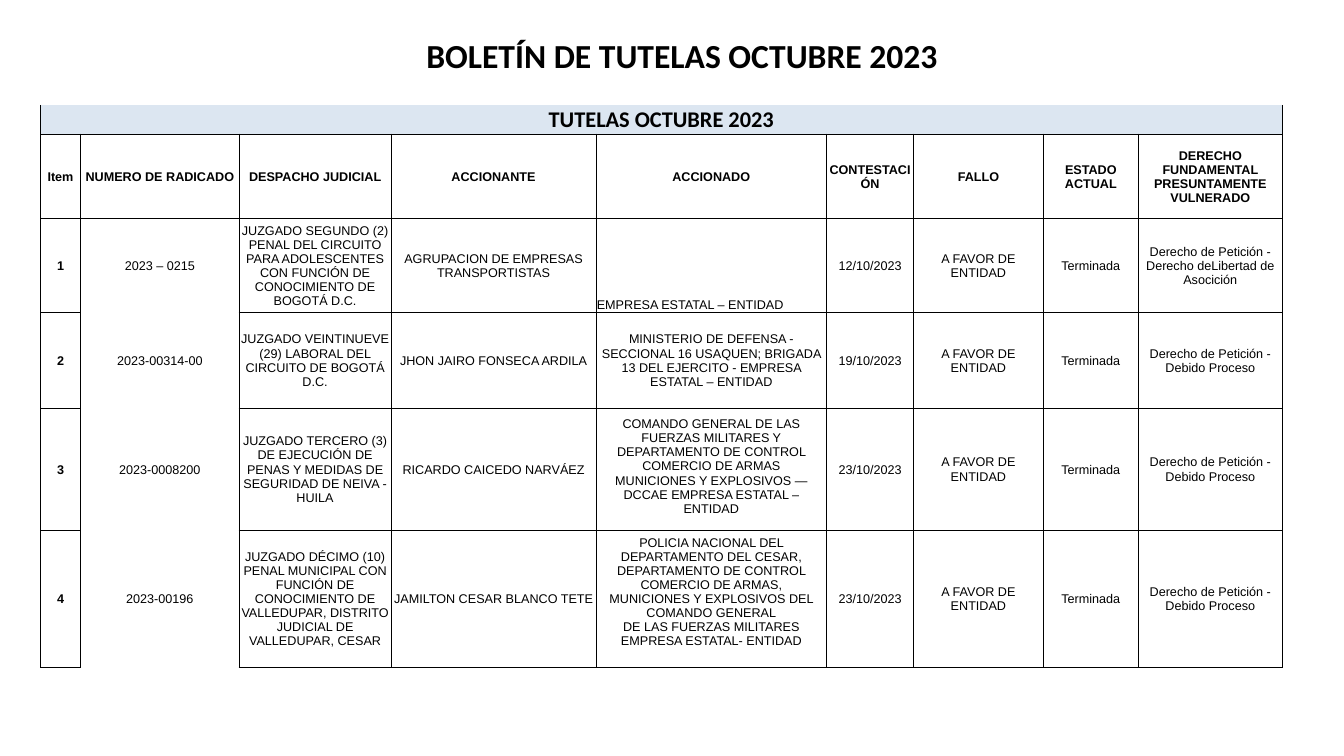
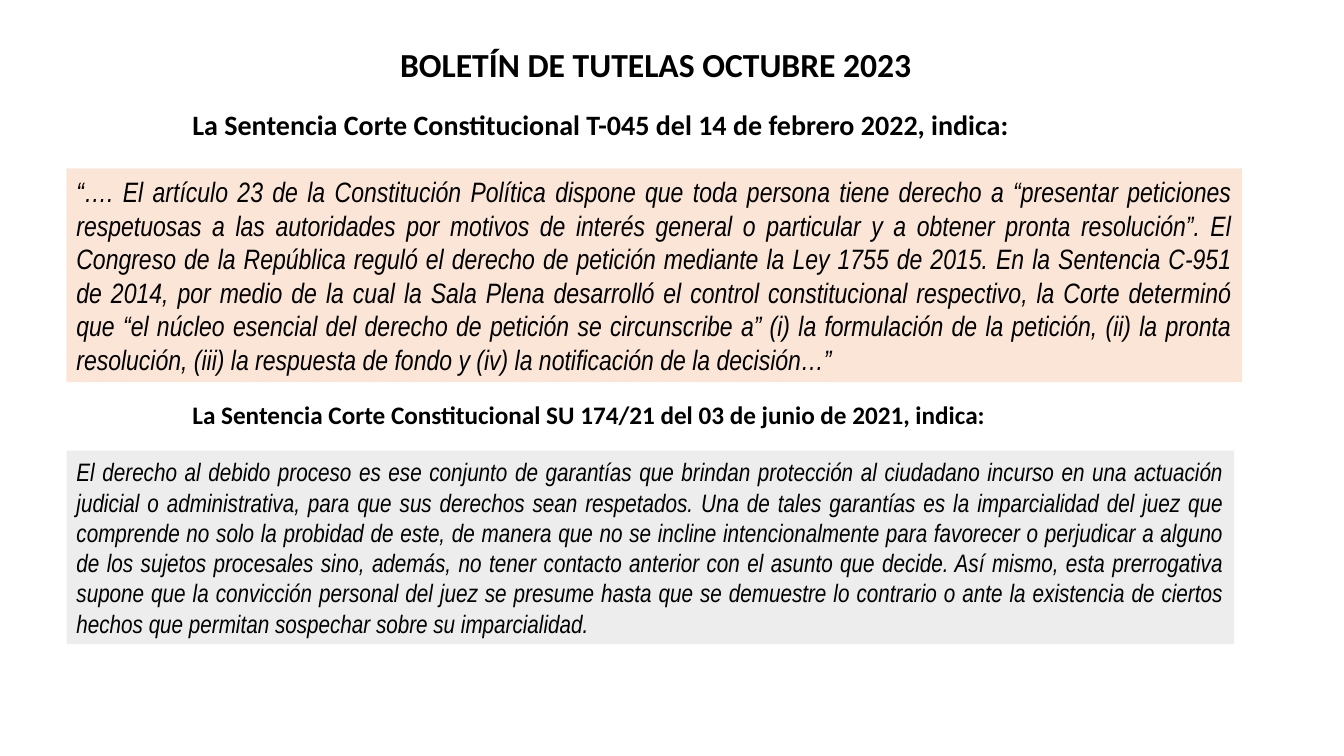
from dataclasses import dataclass

from lxml.etree import SubElement
from pptx import Presentation
from pptx.dml.color import RGBColor
from pptx.enum.shapes import MSO_SHAPE
from pptx.enum.text import MSO_ANCHOR, MSO_AUTO_SIZE, PP_ALIGN
from pptx.oxml.ns import qn
from pptx.util import Inches, Pt


@dataclass(frozen=True)
class Theme:
    ink: str = "000000"
    band: str = "DCE6F1"
    peach: str = "FBE5D6"
    gray: str = "EDEDED"
    heading_font: str = "Calibri"
    table_font: str = "Arial"
    quote_font: str = "Arial Narrow"
    title_size: int = 24
    large_size: int = 20
    medium_size: int = 18
    band_size: int = 16
    cell_size: int = 9
    border_width: float = 0.5


THEME = Theme()
TITLE = "BOLETÍN DE TUTELAS OCTUBRE 2023"
TABLE_TITLE = "TUTELAS OCTUBRE 2023"
COLUMN_WIDTHS = [0.4, 1.57, 1.51, 2.03, 2.29, 0.86, 1.29, 0.94, 1.43]
ROW_HEIGHTS = [0.29, 0.84, 0.93, 0.95, 1.21, 1.36]
ITEM_COLUMN, FILE_COLUMN, DEFENDANT_COLUMN = 0, 1, 4
CELL_MARGINS = {
    "margin_left": Inches(0.01),
    "margin_right": Inches(0.01),
    "margin_top": Inches(0.01),
    "margin_bottom": 0,
    "vertical_anchor": MSO_ANCHOR.MIDDLE,
}
RULING = "A FAVOR DE ENTIDAD"
STATUS = "Terminada"
DUE_PROCESS = "Derecho de Petición - Debido Proceso"
HEADERS = [
    "Item",
    "NUMERO DE RADICADO",
    "DESPACHO JUDICIAL",
    "ACCIONANTE",
    "ACCIONADO",
    "CONTESTACIÓN",
    "FALLO",
    "ESTADO ACTUAL",
    "DERECHO FUNDAMENTAL PRESUNTAMENTE VULNERADO",
]
CASES = [
    (
        "2023 – 0215",
        "JUZGADO SEGUNDO (2) PENAL DEL CIRCUITO PARA ADOLESCENTES CON FUNCIÓN DE "
        "CONOCIMIENTO DE BOGOTÁ D.C.",
        "AGRUPACION DE EMPRESAS TRANSPORTISTAS",
        "EMPRESA ESTATAL – ENTIDAD",
        "12/10/2023",
        "Derecho de Petición - Derecho deLibertad de Asocición",
    ),
    (
        "2023-00314-00",
        "JUZGADO VEINTINUEVE (29) LABORAL DEL CIRCUITO DE BOGOTÁ D.C.",
        "JHON JAIRO FONSECA ARDILA",
        "MINISTERIO DE DEFENSA - SECCIONAL 16 USAQUEN; BRIGADA 13 DEL EJERCITO - "
        "EMPRESA ESTATAL – ENTIDAD",
        "19/10/2023",
        DUE_PROCESS,
    ),
    (
        "2023-0008200",
        "JUZGADO TERCERO (3) DE EJECUCIÓN DE PENAS Y MEDIDAS DE SEGURIDAD DE NEIVA - HUILA",
        "RICARDO CAICEDO NARVÁEZ",
        "COMANDO GENERAL DE LAS FUERZAS MILITARES Y\v"
        "DEPARTAMENTO DE CONTROL COMERCIO DE ARMAS\v"
        "MUNICIONES Y EXPLOSIVOS — DCCAE EMPRESA ESTATAL – ENTIDAD",
        "23/10/2023",
        DUE_PROCESS,
    ),
    (
        "2023-00196",
        "JUZGADO DÉCIMO (10) PENAL MUNICIPAL CON FUNCIÓN DE CONOCIMIENTO DE VALLEDUPAR, "
        "DISTRITO JUDICIAL DE VALLEDUPAR, CESAR",
        "JAMILTON CESAR BLANCO TETE",
        "POLICIA NACIONAL DEL DEPARTAMENTO DEL CESAR, DEPARTAMENTO DE CONTROL "
        "COMERCIO DE ARMAS,\vMUNICIONES Y EXPLOSIVOS DEL COMANDO GENERAL\v"
        "DE LAS FUERZAS MILITARES EMPRESA ESTATAL- ENTIDAD",
        "23/10/2023",
        DUE_PROCESS,
    ),
]
PETITION_LEAD = "La Sentencia Corte Constitucional T-045 del 14 de febrero 2022, indica:"
PETITION_QUOTE = (
    "“…. El artículo 23 de la Constitución Política dispone que toda persona tiene derecho a "
    "“presentar peticiones respetuosas a las autoridades por motivos de interés general o "
    "particular y a obtener pronta resolución”. El Congreso de la República reguló el derecho "
    "de petición mediante la Ley 1755 de 2015. En la Sentencia C-951 de 2014, por medio de la "
    "cual la Sala Plena desarrolló el control constitucional respectivo, la Corte determinó que "
    "“el núcleo esencial del derecho de petición se circunscribe a” (i) la formulación de la "
    "petición, (ii) la pronta resolución, (iii) la respuesta de fondo y (iv) la notificación de "
    "la decisión…”"
)
PROCESS_LEAD = "La Sentencia Corte Constitucional SU 174/21 del 03 de junio de 2021, indica:"
PROCESS_QUOTE = (
    "El derecho al debido proceso es ese conjunto de garantías que brindan protección al "
    "ciudadano incurso en una actuación judicial o administrativa, para que sus derechos sean "
    "respetados. Una de tales garantías es la imparcialidad del juez que comprende no solo la "
    "probidad de este, de manera que no se incline intencionalmente para favorecer o perjudicar "
    "a alguno de los sujetos procesales sino, además, no tener contacto anterior con el asunto "
    "que decide. Así mismo, esta prerrogativa supone que la convicción personal del juez se "
    "presume hasta que se demuestre lo contrario o ante la existencia de ciertos hechos que "
    "permitan sospechar sobre su imparcialidad."
)


def apply_format(target, values):
    for name, value in values.items():
        setattr(target, name, value)


def write_text(text_frame, text, font, size, alignment=PP_ALIGN.LEFT, bold=False, italic=False):
    paragraph = text_frame.paragraphs[0]
    paragraph.text = text
    paragraph.alignment = alignment
    style = {"name": font, "size": Pt(size), "bold": bold, "italic": italic}
    for run in paragraph.runs:
        apply_format(run.font, style)
        run.font.color.rgb = RGBColor.from_string(THEME.ink)


def add_heading(slide, text, left, top, width, height, size, wrap=True):
    box = slide.shapes.add_textbox(Inches(left), Inches(top), Inches(width), Inches(height))
    frame_format = {"word_wrap": wrap, "auto_size": MSO_AUTO_SIZE.SHAPE_TO_FIT_TEXT}
    apply_format(box.text_frame, frame_format)
    write_text(box.text_frame, text, THEME.heading_font, size, bold=True)


def add_title(slide, left, top):
    add_heading(slide, TITLE, left, top, 5.32, 0.5, THEME.title_size, wrap=False)


def add_quote(slide, text, top, width, height, fill, size):
    panel = slide.shapes.add_shape(
        MSO_SHAPE.RECTANGLE, Inches(0.66), Inches(top), Inches(width), Inches(height)
    )
    panel.shadow.inherit = False
    panel.fill.solid()
    panel.fill.fore_color.rgb = RGBColor.from_string(fill)
    panel.line.fill.background()
    frame_format = {"word_wrap": True, "auto_size": MSO_AUTO_SIZE.SHAPE_TO_FIT_TEXT}
    apply_format(panel.text_frame, frame_format)
    write_text(panel.text_frame, text, THEME.quote_font, size, PP_ALIGN.JUSTIFY, italic=True)


def set_borders(cell, visible_sides):
    properties = cell._tc.get_or_add_tcPr()
    for side in "LRTB":
        line = SubElement(properties, qn(f"a:ln{side}"), w=str(Pt(THEME.border_width)))
        if side in visible_sides:
            fill = SubElement(line, qn("a:solidFill"))
            SubElement(fill, qn("a:srgbClr"), val=THEME.ink)
        else:
            SubElement(line, qn("a:noFill"))


def visible_sides(row, column):
    if row == 0:
        return "LRB"
    if column == FILE_COLUMN and row > 1:
        return "LRT" if row == 2 else "LR"
    return "LRTB"


def fill_cell(cell, text, row, column):
    apply_format(cell, CELL_MARGINS)
    bold = row == 1 or column == ITEM_COLUMN
    write_text(cell.text_frame, text, THEME.table_font, THEME.cell_size, PP_ALIGN.CENTER, bold)


def add_case_table(slide):
    table = slide.shapes.add_table(
        len(ROW_HEIGHTS), len(COLUMN_WIDTHS), Inches(0.4), Inches(1.04),
        Inches(sum(COLUMN_WIDTHS)), Inches(sum(ROW_HEIGHTS)),
    ).table
    apply_format(table, {"first_row": False, "horz_banding": False})
    for column, width in zip(table.columns, COLUMN_WIDTHS):
        column.width = Inches(width)
    for row, height in zip(table.rows, ROW_HEIGHTS):
        row.height = Inches(height)
    for row in range(len(ROW_HEIGHTS)):
        for column in range(len(COLUMN_WIDTHS)):
            cell = table.cell(row, column)
            set_borders(cell, visible_sides(row, column))
            cell.fill.background()

    band = table.cell(0, 0)
    band.merge(table.cell(0, len(COLUMN_WIDTHS) - 1))
    band.fill.solid()
    band.fill.fore_color.rgb = RGBColor.from_string(THEME.band)
    apply_format(band, CELL_MARGINS)
    write_text(
        band.text_frame, TABLE_TITLE, THEME.heading_font, THEME.band_size, PP_ALIGN.CENTER, True
    )

    records = [HEADERS]
    for number, (*details, right) in enumerate(CASES, start=1):
        records.append([str(number), *details, RULING, STATUS, right])
    for row, record in enumerate(records, start=1):
        for column, text in enumerate(record):
            fill_cell(table.cell(row, column), text, row, column)

    first_defendant = table.cell(2, DEFENDANT_COLUMN)
    first_defendant.vertical_anchor = MSO_ANCHOR.BOTTOM
    first_defendant.text_frame.paragraphs[0].alignment = PP_ALIGN.LEFT
    table.cell(4, DEFENDANT_COLUMN).vertical_anchor = MSO_ANCHOR.BOTTOM
    for row in (4, 5):
        table.cell(row, DEFENDANT_COLUMN).margin_bottom = Inches(0.14)


def build_case_slide(slide):
    add_title(slide, 4.13, 0.3)
    add_case_table(slide)


def build_ruling_slide(slide):
    add_title(slide, 3.87, 0.39)
    add_heading(slide, PETITION_LEAD, 1.81, 1.02, 10.06, 0.44, THEME.large_size)
    add_quote(slide, PETITION_QUOTE, 1.67, 11.66, 2.12, THEME.peach, THEME.large_size)
    add_heading(slide, PROCESS_LEAD, 1.81, 3.91, 10.38, 0.4, THEME.medium_size)
    add_quote(slide, PROCESS_QUOTE, 4.47, 11.58, 1.92, THEME.gray, THEME.medium_size)


def main():
    presentation = Presentation()
    apply_format(presentation, {"slide_width": Inches(13.33), "slide_height": Inches(7.5)})
    for build_slide in (build_case_slide, build_ruling_slide):
        build_slide(presentation.slides.add_slide(presentation.slide_layouts[6]))
    presentation.save("out.pptx")


if __name__ == "__main__":
    main()
